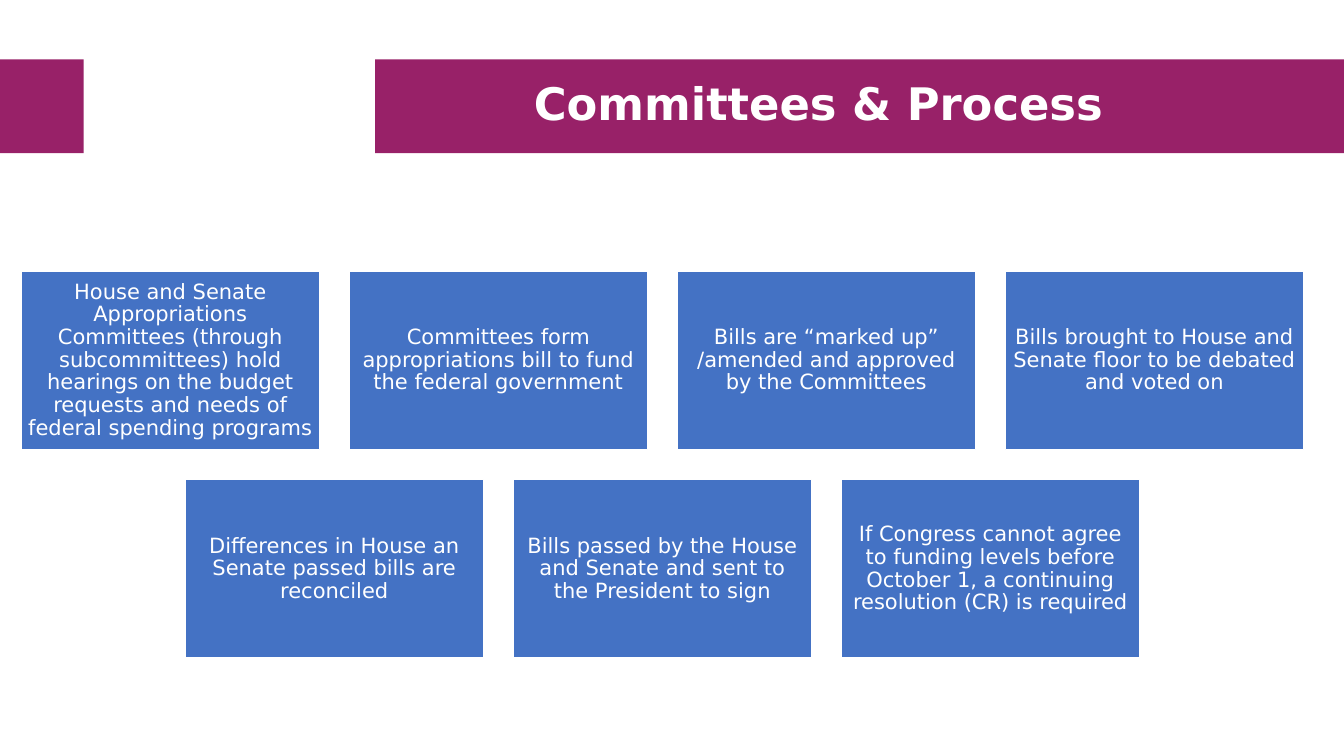
from pptx import Presentation
from pptx.dml.color import RGBColor
from pptx.enum.shapes import MSO_SHAPE
from pptx.enum.text import MSO_ANCHOR, PP_ALIGN
from pptx.util import Inches, Pt

FONT = "DejaVu Sans"
COLORS = {"band": "982168", "card": "4472C4", "white": "FFFFFF"}
STEP_ROWS = [
    [
        "House and Senate Appropriations Committees (through subcommittees) hold "
        "hearings on the budget requests and needs of federal spending programs",
        "Committees form appropriations bill to fund the federal government",
        "Bills are “marked up” /amended and approved by the Committees",
        "Bills brought to House and Senate floor to be debated and voted on",
    ],
    [
        "Differences in House an Senate passed bills are reconciled",
        "Bills passed by the House and Senate and sent to the President to sign",
        "If Congress cannot agree to funding levels before October 1, "
        "a continuing resolution (CR) is required",
    ],
]


def color(name):
    return RGBColor.from_string(COLORS[name])


def add_rect(slide, x, y, w, h, fill, line=None):
    sp = slide.shapes.add_shape(
        MSO_SHAPE.RECTANGLE, Inches(x), Inches(y), Inches(w), Inches(h)
    )
    sp.shadow.inherit = False
    sp.fill.solid()
    sp.fill.fore_color.rgb = color(fill)
    if line:
        sp.line.color.rgb = color(line)
        sp.line.width = Pt(1)
    else:
        sp.line.fill.background()
    return sp


def write(sp, text, size, bold=False, inset=None):
    tf = sp.text_frame
    tf.word_wrap = True
    tf.vertical_anchor = MSO_ANCHOR.MIDDLE
    if inset is not None:
        tf.margin_left = tf.margin_right = Inches(inset)
        tf.margin_top = tf.margin_bottom = Inches(inset)
    p = tf.paragraphs[0]
    p.alignment = PP_ALIGN.CENTER
    p.line_spacing = 0.9
    r = p.add_run()
    r.text = text
    r.font.name = FONT
    r.font.size = Pt(size)
    r.font.bold = bold
    r.font.color.rgb = color("white")


def add_header(slide, x, y, w, h):
    band_x = x + 3.72
    add_rect(slide, band_x, y, w - 3.72, h, "band")
    add_rect(slide, x, y, 0.83, h, "band")
    title = slide.shapes.add_textbox(
        Inches(band_x + 0.2), Inches(y + 0.09), Inches(8.4), Inches(h - 0.18)
    )
    write(title, "Committees & Process", 32, bold=True)


def add_steps(slide, x, y, w, h):
    card_w, card_h = 2.96, 1.77
    columns = max(len(row) for row in STEP_ROWS)
    gap_x = (w - columns * card_w) / (columns - 1)
    pitch_y = (h - card_h) / (len(STEP_ROWS) - 1)
    for i, row in enumerate(STEP_ROWS):
        row_w = len(row) * (card_w + gap_x) - gap_x
        row_x = x + (w - row_w) / 2
        for j, text in enumerate(row):
            card = add_rect(
                slide, row_x + j * (card_w + gap_x), y + i * pitch_y,
                card_w, card_h, "card", line="white",
            )
            write(card, text, 15, inset=0.06)


def main():
    prs = Presentation()
    prs.slide_width = Inches(13.33)
    prs.slide_height = Inches(7.5)
    slide = prs.slides.add_slide(prs.slide_layouts[6])
    add_header(slide, 0, 0.59, 13.33, 0.93)
    add_steps(slide, 0.21, 2.69, 12.72, 3.84)
    prs.save("out.pptx")


if __name__ == "__main__":
    main()
